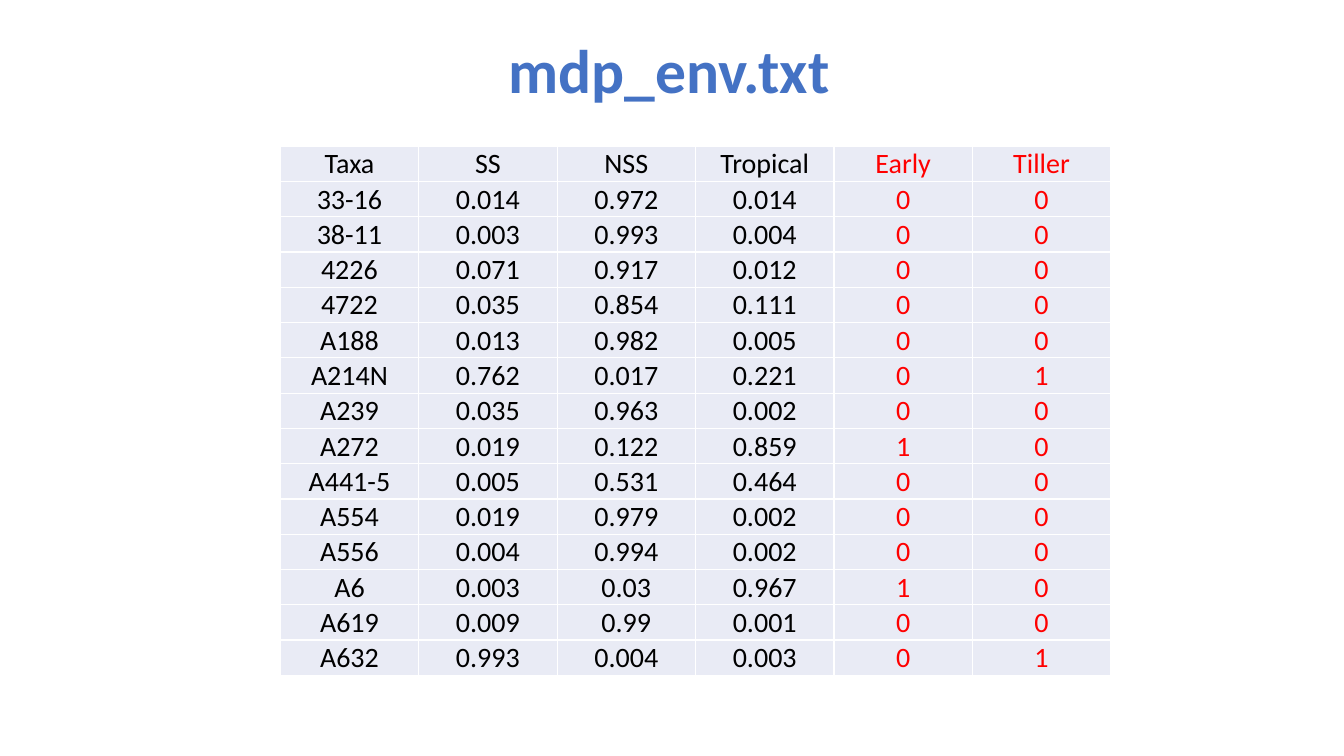
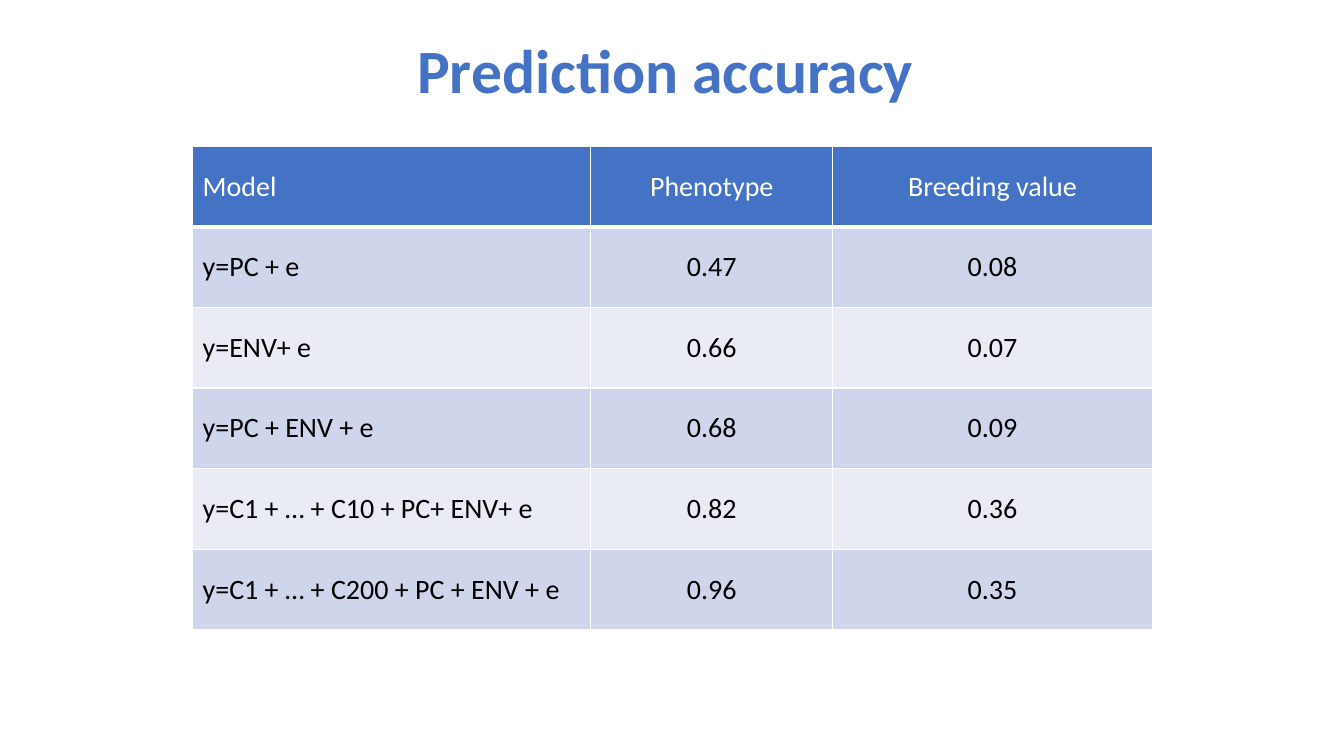
"""Build two slides of tables on covariates and prediction accuracy."""
from dataclasses import dataclass
from typing import Any

from lxml.etree import SubElement
from pptx import Presentation
from pptx.dml.color import RGBColor
from pptx.enum.text import MSO_ANCHOR, PP_ALIGN
from pptx.oxml.ns import qn
from pptx.util import Inches, Pt


@dataclass(frozen=True)
class Theme:
    font: str = "Calibri"
    blue: str = "4472C4"
    dark: str = "CFD5EA"
    light: str = "E9EBF5"
    white: str = "FFFFFF"
    black: str = "000000"
    red: str = "FF0000"
    title: int = 44
    body: int = 20


@dataclass(frozen=True)
class Grid:
    left: float
    cols: list[float]
    row: float
    rows: list[list[str]]
    fills: tuple[str, ...]
    aligns: list[PP_ALIGN]
    inks: list[str]
    format: dict[str, Any]
    head: bool = False


@dataclass(frozen=True)
class Page:
    title: str
    left: float
    grid: Grid


THEME = Theme()
TOP = 1.45
MID, LEFT = PP_ALIGN.CENTER, PP_ALIGN.LEFT
TAXA = """Taxa SS NSS Tropical Early Tiller
33-16 0.014 0.972 0.014 0 0
38-11 0.003 0.993 0.004 0 0
4226 0.071 0.917 0.012 0 0
4722 0.035 0.854 0.111 0 0
A188 0.013 0.982 0.005 0 0
A214N 0.762 0.017 0.221 0 1
A239 0.035 0.963 0.002 0 0
A272 0.019 0.122 0.859 1 0
A441-5 0.005 0.531 0.464 0 0
A554 0.019 0.979 0.002 0 0
A556 0.004 0.994 0.002 0 0
A6 0.003 0.03 0.967 1 0
A619 0.009 0.99 0.001 0 0
A632 0.993 0.004 0.003 0 1"""
MODELS = [
    ["Model", "Phenotype", "Breeding value"],
    ["y=PC + e", "0.47", "0.08"],
    ["y=ENV+ e", "0.66", "0.07"],
    ["y=PC + ENV + e", "0.68", "0.09"],
    ["y=C1 + … + C10 + PC+ ENV+ e", "0.82", "0.36"],
    ["y=C1 + … + C200 + PC + ENV + e", "0.96", "0.35"],
]
TIGHT = {
    "vertical_anchor": MSO_ANCHOR.BOTTOM,
    "margin_left": Inches(0.01),
    "margin_right": Inches(0.01),
    "margin_top": Inches(0.01),
    "margin_bottom": Inches(0),
}
PAGES = [
    Page("mdp_env.txt", 0.89, Grid(
        2.78, [1.373] * 6, 0.35, [line.split() for line in TAXA.splitlines()],
        (THEME.light,), [MID] * 6, [THEME.black] * 4 + [THEME.red] * 2, TIGHT)),
    Page("Prediction accuracy ", 0.92, Grid(
        1.91, [3.95, 2.4, 3.17], 0.8, MODELS, (THEME.light, THEME.dark),
        [LEFT, MID, MID], [THEME.black] * 3,
        {"vertical_anchor": MSO_ANCHOR.MIDDLE}, head=True)),
]


def apply(target: Any, format: dict[str, Any]) -> None:
    """Set each named attribute of the target."""
    for name, value in format.items():
        setattr(target, name, value)


def write(frame: Any, text: str, size: int, ink: str, align: PP_ALIGN,
          bold: bool = False) -> Any:
    """Write one styled run and return its paragraph."""
    para = frame.paragraphs[0]
    para.alignment = align
    run = para.add_run()
    run.text = text
    apply(run.font, {"name": THEME.font, "size": Pt(size), "bold": bold})
    run.font.color.rgb = RGBColor.from_string(ink)
    return para


def edge(cell: Any, head: bool) -> None:
    """Draw white borders, thicker under a header."""
    props = cell._tc.get_or_add_tcPr()
    for side in "LRTB":
        width = Pt(3 if head and side == "B" else 1)
        line = SubElement(props, qn(f"a:ln{side}"), w=str(width))
        fill = SubElement(line, qn("a:solidFill"))
        SubElement(fill, qn("a:srgbClr"), val=THEME.white)


def add_title(slide: Any, page: Page) -> None:
    """Add the centred blue title."""
    box = slide.shapes.add_textbox(
        Inches(page.left), Inches(0), Inches(11.5), Inches(TOP))
    frame = box.text_frame
    apply(frame, {"word_wrap": True, "vertical_anchor": MSO_ANCHOR.MIDDLE})
    para = write(frame, page.title, THEME.title, THEME.blue, MID, bold=True)
    para.line_spacing = 0.9


def add_grid(slide: Any, grid: Grid) -> None:
    """Add a table with filled and bordered cells."""
    table = slide.shapes.add_table(
        len(grid.rows), len(grid.cols), Inches(grid.left), Inches(TOP),
        Inches(sum(grid.cols)), Inches(grid.row * len(grid.rows))).table
    apply(table, {"first_row": grid.head, "horz_banding": False})
    for col, width in zip(table.columns, grid.cols):
        col.width = Inches(width)
    for y, row in enumerate(grid.rows):
        table.rows[y].height = Inches(grid.row)
        head = grid.head and y == 0
        fill = THEME.blue if head else grid.fills[y % len(grid.fills)]
        for x, text in enumerate(row):
            cell = table.cell(y, x)
            apply(cell, grid.format)
            edge(cell, head)
            cell.fill.solid()
            cell.fill.fore_color.rgb = RGBColor.from_string(fill)
            ink = THEME.white if head else grid.inks[x]
            write(cell.text_frame, text, THEME.body, ink, grid.aligns[x])


def main() -> None:
    """Build and save the deck."""
    deck = Presentation()
    apply(deck, {"slide_width": Inches(13.33), "slide_height": Inches(7.5)})
    for page in PAGES:
        slide = deck.slides.add_slide(deck.slide_layouts[6])
        add_title(slide, page)
        add_grid(slide, page.grid)
    deck.save("out.pptx")


if __name__ == "__main__":
    main()
